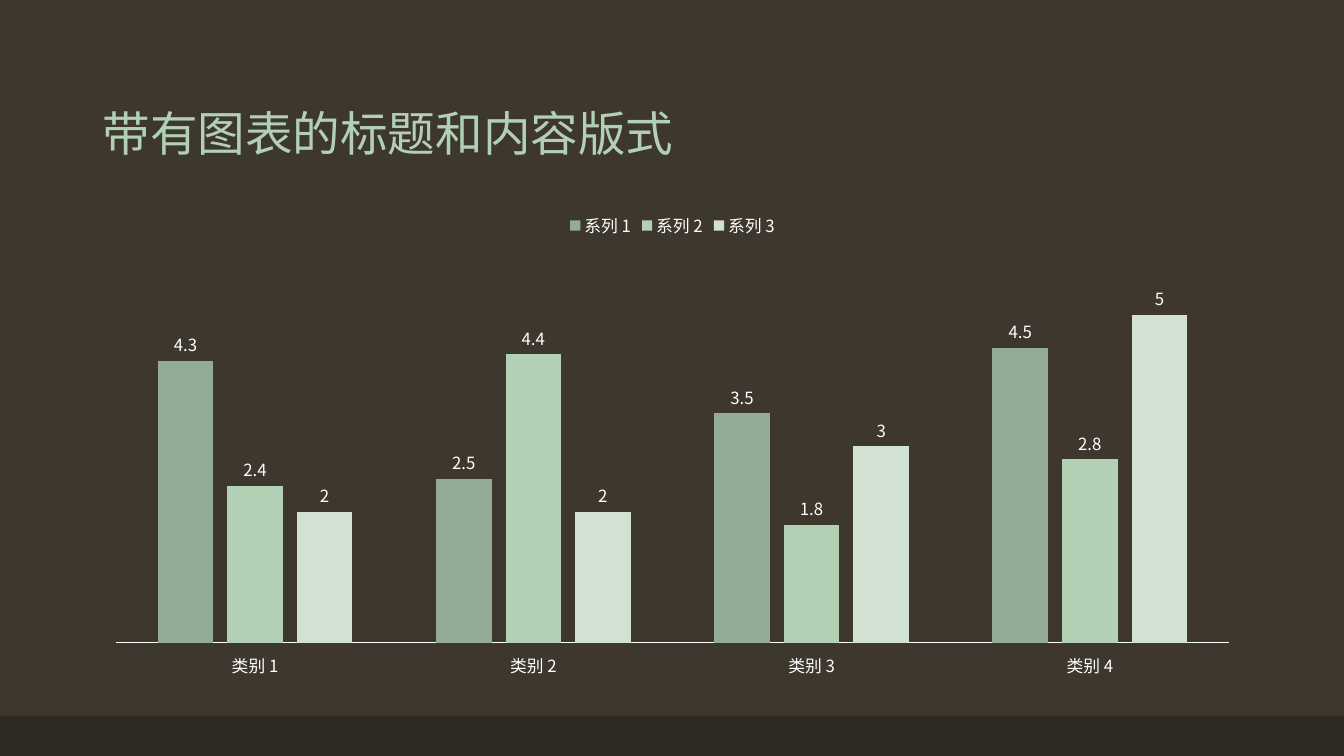
from lxml.etree import SubElement
from pptx import Presentation
from pptx.chart.data import CategoryChartData
from pptx.dml.color import RGBColor
from pptx.enum.chart import XL_CHART_TYPE as ChartType
from pptx.enum.chart import XL_LABEL_POSITION as LabelPosition
from pptx.enum.chart import XL_LEGEND_POSITION as LegendPosition
from pptx.enum.chart import XL_TICK_LABEL_POSITION as TickLabelPosition
from pptx.enum.chart import XL_TICK_MARK as TickMark
from pptx.enum.shapes import MSO_SHAPE as Shape
from pptx.enum.text import MSO_ANCHOR as Anchor
from pptx.oxml.ns import qn
from pptx.util import Inches, Pt

COLORS = {
    "background": "3D372E",
    "footer": "2E2923",
    "title": "B2D0B4",
    "text": "FFFFFF",
}
LATIN_FONT = "TeX Gyre Schola"
CHINESE_FONT = "Noto Sans CJK SC"
CATEGORIES = ["类别 1", "类别 2", "类别 3", "类别 4"]
SERIES = [
    ("系列 1", [4.3, 2.5, 3.5, 4.5], "94AC95"),
    ("系列 2", [2.4, 4.4, 1.8, 2.8], "B2D0B4"),
    ("系列 3", [2, 2, 3, 5], "D1E2D2"),
]
PLOT_AREA = {"x": 0.02, "y": 0.1, "w": 0.96, "h": 0.82}


def paint(fill, color):
    fill.solid()
    fill.fore_color.rgb = RGBColor.from_string(color)


def style_font(font, size, name=CHINESE_FONT, color=COLORS["text"]):
    font.size = Pt(size)
    font.name = name
    font.color.rgb = RGBColor.from_string(color)


def add_footer_band(slide, left, top, width, height):
    band = slide.shapes.add_shape(
        Shape.RECTANGLE, Inches(left), Inches(top), Inches(width), Inches(height))
    band.shadow.inherit = False
    paint(band.fill, COLORS["footer"])
    band.line.fill.background()


def add_title(slide, left, top, width, height):
    box = slide.shapes.add_textbox(
        Inches(left), Inches(top), Inches(width), Inches(height))
    frame = box.text_frame
    frame.word_wrap = True
    frame.vertical_anchor = Anchor.BOTTOM
    frame.text = "带有图表的标题和内容版式"
    paragraph = frame.paragraphs[0]
    paragraph.line_spacing = 0.9
    font = paragraph.runs[0].font
    style_font(font, 34, LATIN_FONT, COLORS["title"])
    properties = paragraph.runs[0]._r.get_or_add_rPr()
    SubElement(properties, qn("a:ea")).set("typeface", CHINESE_FONT)


def place_plot_area(chart):
    """Fix the inner plot area as fractions of the chart."""
    plot_area = chart._chartSpace.chart.plotArea
    layout = plot_area.find(qn("c:layout"))
    if layout is None:
        layout = SubElement(plot_area, qn("c:layout"))
        plot_area.insert(0, layout)
    manual = SubElement(layout, qn("c:manualLayout"))
    settings = {"layoutTarget": "inner", "xMode": "edge", "yMode": "edge", **PLOT_AREA}
    for name, value in settings.items():
        SubElement(manual, qn(f"c:{name}")).set("val", str(value))


def style_axes(chart):
    value_axis = chart.value_axis
    value_axis.visible = False
    value_axis.has_major_gridlines = False
    value_axis.minimum_scale = 0
    value_axis.maximum_scale = 6
    category_axis = chart.category_axis
    category_axis.major_tick_mark = TickMark.NONE
    category_axis.minor_tick_mark = TickMark.NONE
    category_axis.tick_label_position = TickLabelPosition.LOW
    style_font(category_axis.tick_labels.font, 12)
    line = category_axis.format.line
    line.width = Pt(0.75)
    paint(line.fill, COLORS["text"])


def style_series(series, color):
    paint(series.format.fill, color)
    series.invert_if_negative = False
    labels = series.data_labels
    labels.show_value = True
    labels.position = LabelPosition.OUTSIDE_END
    style_font(labels.font, 12)


def add_column_chart(slide, left, top, width, height):
    data = CategoryChartData()
    data.categories = CATEGORIES
    for name, values, _ in SERIES:
        data.add_series(name, values)
    chart = slide.shapes.add_chart(
        ChartType.COLUMN_CLUSTERED, Inches(left), Inches(top),
        Inches(width), Inches(height), data).chart
    style_font(chart.font, 10, LATIN_FONT)
    chart.has_title = False
    chart.has_legend = True
    chart.legend.position = LegendPosition.TOP
    chart.legend.include_in_layout = False
    style_font(chart.legend.font, 12)
    plot = chart.plots[0]
    plot.vary_by_categories = False
    plot.gap_width = 150
    plot.overlap = -25
    for series, (_, _, color) in zip(plot.series, SERIES):
        style_series(series, color)
    style_axes(chart)
    place_plot_area(chart)


def main():
    presentation = Presentation()
    presentation.slide_width = Inches(13.33)
    presentation.slide_height = Inches(7.5)
    slide = presentation.slides.add_slide(presentation.slide_layouts[6])
    paint(slide.background.fill, COLORS["background"])
    add_footer_band(slide, 0, 7.1, 13.33, 0.4)
    add_title(slide, 0.92, 0.4, 11.5, 1.25)
    add_column_chart(slide, 0.92, 2, 11.5, 4.76)
    presentation.save("out.pptx")


if __name__ == "__main__":
    main()
